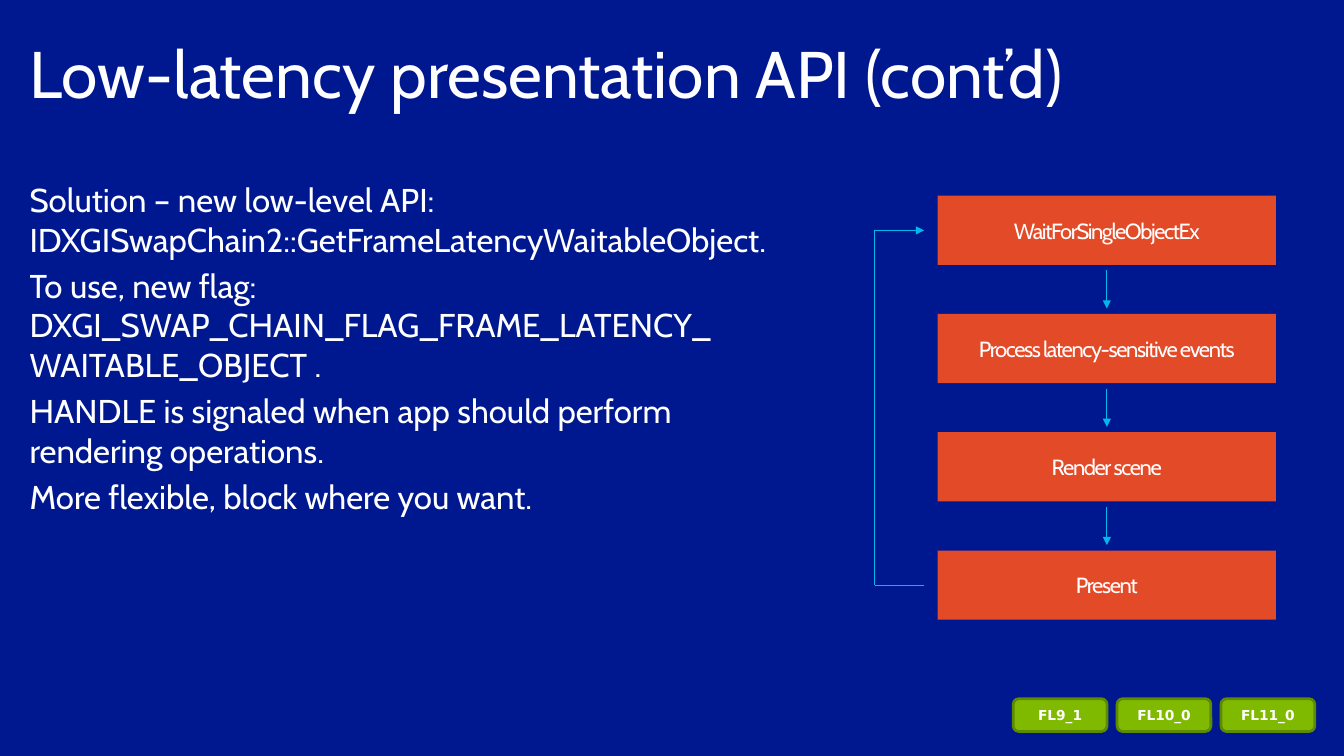
import pptx
import pptx.util
import pptx.dml.color
import pptx.enum.shapes
import pptx.enum.text
import pptx.oxml.ns
import lxml.etree

Cm = pptx.util.Cm
Pt = pptx.util.Pt
RGBColor = pptx.dml.color.RGBColor
SHAPE = pptx.enum.shapes.MSO_SHAPE
CENTER = pptx.enum.text.PP_ALIGN.CENTER
TOP = pptx.enum.text.MSO_ANCHOR.TOP
MIDDLE = pptx.enum.text.MSO_ANCHOR.MIDDLE

NAVY = RGBColor(0x00, 0x18, 0x8F)
WHITE = RGBColor(0xFF, 0xFF, 0xFF)
ORANGE = RGBColor(0xE3, 0x4A, 0x28)
CYAN = RGBColor(0x00, 0xB8, 0xED)
GREEN = RGBColor(0x7F, 0xBA, 0x00)
DARK_GREEN = RGBColor(0x5E, 0x8A, 0x00)

TITLE_FONT = {"name": "Cabin", "size": Pt(48)}
BODY_FONT = {"name": "Cabin", "size": Pt(24)}
STEP_FONT = {"name": "Cabin", "size": Pt(16)}
BADGE_FONT = {"name": "DejaVu Sans", "size": Pt(10), "bold": True}
NO_MARGINS = {"margin_left": 0, "margin_top": 0, "margin_right": 0, "margin_bottom": 0}

TITLE = "Low-latency presentation API (cont’d)"
BODY = [
    "Solution – new low-level API: \vIDXGISwapChain2::GetFrameLatencyWaitableObject.",
    "To use, new flag: \vDXGI_SWAP_CHAIN_FLAG_FRAME_LATENCY_\vWAITABLE_OBJECT .",
    "HANDLE is signaled when app should perform \vrendering operations.",
    "More flexible, block where you want.",
]
STEPS = ["WaitForSingleObjectEx", "Process latency-sensitive events", "Render scene", "Present"]
BADGES = ["FL9_1", "FL10_0", "FL11_0"]


def set_all(obj, values):
    for name, value in values.items():
        setattr(obj, name, value)


def write(sp, paragraphs, font, frame, para):
    tf = sp.text_frame
    set_all(tf, {"word_wrap": True, **frame})
    for i, text in enumerate(paragraphs):
        p = tf.add_paragraph() if i else tf.paragraphs[0]
        p.text = text
        set_all(p, para)
        for r in p.runs:
            set_all(r.font, font)
            r.font.color.rgb = WHITE


def text_block(slide, paragraphs, font, left, top, width, height, space=0):
    sp = slide.shapes.add_textbox(left, top, width, height)
    write(sp, paragraphs, font, {"vertical_anchor": TOP, **NO_MARGINS},
          {"space_before": Pt(space)})


def filled_shape(shapes, kind, fill, left, top, width, height):
    sp = shapes.add_shape(kind, left, top, width, height)
    sp.shadow.inherit = False
    sp.fill.solid()
    sp.fill.fore_color.rgb = fill
    sp.line.fill.background()
    return sp


def connect(shapes, x1, y1, x2, y2, arrow=True):
    line = shapes.add_connector(pptx.enum.shapes.MSO_CONNECTOR.STRAIGHT, x1, y1, x2, y2)
    line.line.color.rgb = CYAN
    line.line.width = Pt(0.75)
    qn = pptx.oxml.ns.qn
    if arrow:
        ln = line.line._get_or_add_ln()
        lxml.etree.SubElement(ln, qn("a:tailEnd"), type="triangle")
    lxml.etree.SubElement(line._element.spPr, qn("a:effectLst"))


def frame_loop(slide, left, top, width, height):
    shapes = slide.shapes.add_group_shape().shapes
    box_left, box_width, box_height = left + Cm(1.62), width - Cm(1.62), Cm(1.78)
    pitch = (height - box_height) // (len(STEPS) - 1)
    gap = Cm(0.14)
    center = box_left + box_width // 2
    for i, step in enumerate(STEPS):
        y = top + i * pitch
        sp = filled_shape(shapes, SHAPE.RECTANGLE, ORANGE, box_left, y, box_width, box_height)
        write(sp, [step], STEP_FONT, {"vertical_anchor": MIDDLE, **NO_MARGINS},
              {"alignment": CENTER})
        for r in sp.text_frame.paragraphs[0].runs:
            r.font._element.set("spc", "-100")
        if i:
            connect(shapes, center, y - pitch + box_height + gap, center, y - gap)

    inner = left + Cm(1.27)
    first = top + box_height // 2
    last = top + height - box_height // 2
    connect(shapes, inner, last, left, last, arrow=False)
    connect(shapes, left, first, left, last, arrow=False)
    connect(shapes, left, first, inner, first)


def feature_levels(slide, left, top, width, height):
    badge_width = Cm(2.41)
    pitch = (width - badge_width) // (len(BADGES) - 1)
    for i, level in enumerate(BADGES):
        sp = filled_shape(slide.shapes, SHAPE.ROUNDED_RECTANGLE, GREEN,
                          left + i * pitch, top, badge_width, height)
        sp.line.color.rgb = DARK_GREEN
        sp.line.width = Pt(2)
        write(sp, [level], BADGE_FONT, {"vertical_anchor": MIDDLE}, {"alignment": CENTER})


def main():
    prs = pptx.Presentation()
    set_all(prs, {"slide_width": Cm(34.54), "slide_height": Cm(19.43)})
    slide = prs.slides.add_slide(prs.slide_layouts[6])
    slide.background.fill.solid()
    slide.background.fill.fore_color.rgb = NAVY
    text_block(slide, [TITLE], TITLE_FONT, Cm(0.76), Cm(0.84), Cm(33), Cm(2.54))
    text_block(slide, BODY, BODY_FONT, Cm(0.76), Cm(4.62), Cm(33), Cm(13.97), space=4.8)
    feature_levels(slide, Cm(26.04), Cm(17.96), Cm(7.75), Cm(0.84))
    frame_loop(slide, Cm(22.48), Cm(5.03), Cm(10.31), Cm(10.9))
    prs.save("out.pptx")


if __name__ == "__main__":
    main()
